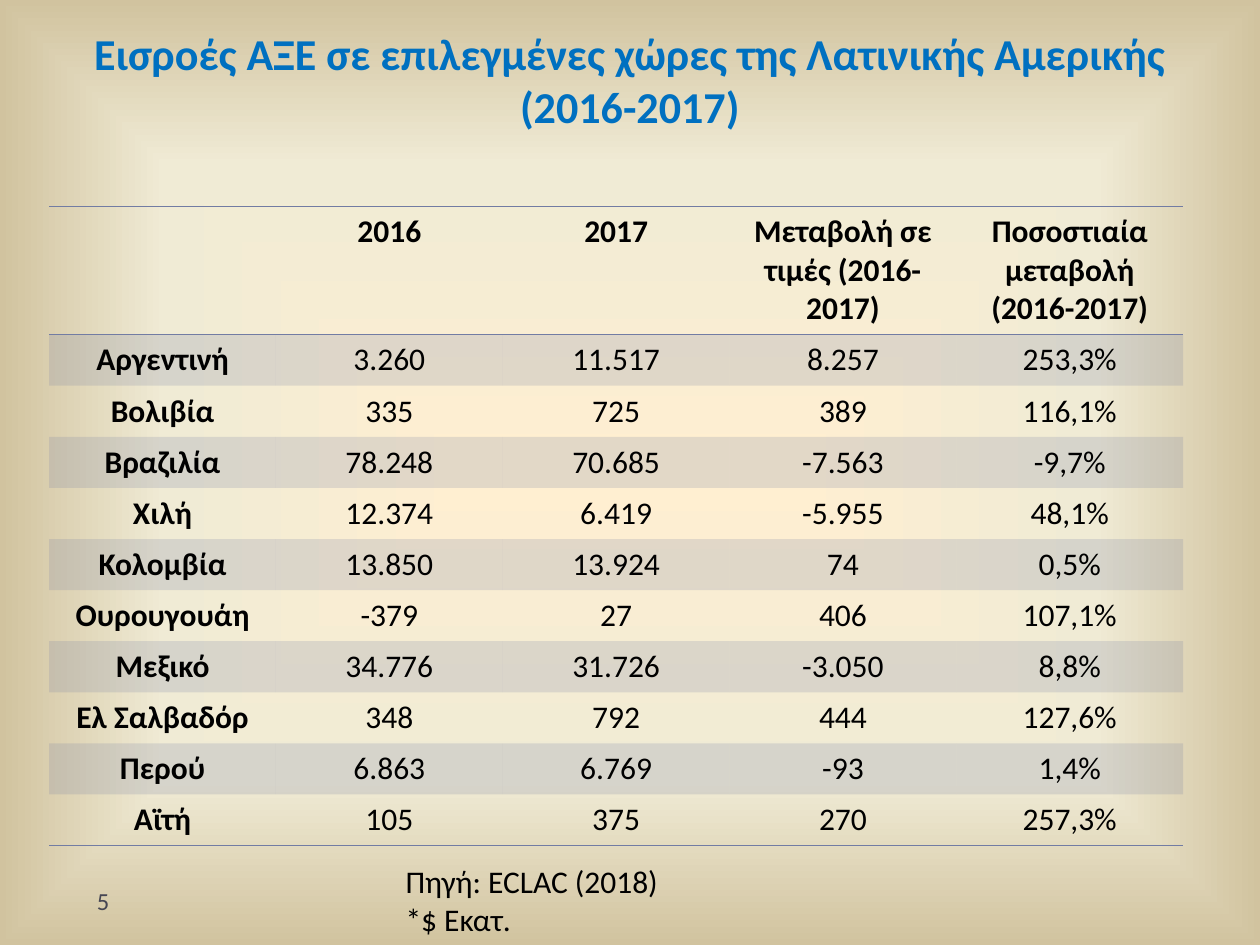
from dataclasses import dataclass

from lxml.etree import SubElement
from pptx import Presentation
from pptx.dml.color import RGBColor
from pptx.enum.text import MSO_ANCHOR, PP_ALIGN
from pptx.oxml import parse_xml
from pptx.oxml.ns import nsdecls, qn
from pptx.util import Inches, Pt

ACCENT = "727CA3"
BLACK = "000000"
FONT = "Calibri"
HEADERS = ("", "2016", "2017", "Μεταβολή σε τιμές (2016-2017)", "Ποσοστιαία μεταβολή (2016-2017)")


@dataclass
class CountryFlow:
    country: str
    first_year: str
    second_year: str
    change: str
    percentage: str

    def values(self) -> tuple:
        return self.country, self.first_year, self.second_year, self.change, self.percentage


FLOWS = (
    CountryFlow("Αργεντινή", "3.260", "11.517", "8.257", "253,3%"),
    CountryFlow("Βολιβία", "335", "725", "389", "116,1%"),
    CountryFlow("Βραζιλία", "78.248", "70.685", "-7.563", "-9,7%"),
    CountryFlow("Χιλή", "12.374", "6.419", "-5.955", "48,1%"),
    CountryFlow("Κολομβία", "13.850", "13.924", "74", "0,5%"),
    CountryFlow("Ουρουγουάη", "-379", "27", "406", "107,1%"),
    CountryFlow("Μεξικό", "34.776", "31.726", "-3.050", "8,8%"),
    CountryFlow("Ελ Σαλβαδόρ", "348", "792", "444", "127,6%"),
    CountryFlow("Περού", "6.863", "6.769", "-93", "1,4%"),
    CountryFlow("Αϊτή", "105", "375", "270", "257,3%"),
)


def color(value: str) -> RGBColor:
    return RGBColor.from_string(value)


def write_text(frame, text: str, *, size: float = 18, fill: str = BLACK, bold: bool = False,
               align=PP_ALIGN.LEFT, anchor=MSO_ANCHOR.TOP) -> None:
    frame.word_wrap = True
    frame.vertical_anchor = anchor
    frame.text = text
    for paragraph in frame.paragraphs:
        paragraph.alignment = align
        paragraph.font.name = FONT
        paragraph.font.size = Pt(size)
        paragraph.font.bold = bold
        paragraph.font.color.rgb = color(fill)


def add_text(slide, text: str, left: float, top: float, width: float, height: float, **text_format) -> None:
    box = slide.shapes.add_textbox(Inches(left), Inches(top), Inches(width), Inches(height))
    write_text(box.text_frame, text, **text_format)


def paint_background(slide) -> None:
    slide.background.fill.solid()
    properties = slide.element.find(".//" + qn("p:bgPr"))
    stops = "".join(
        f'<a:gs pos="{position * 1000}"><a:srgbClr val="{value}"/></a:gs>'
        for position, value in ((0, "FFEFD1"), (65, "F0EBD5"), (100, "D1C39F"))
    )
    gradient = parse_xml(
        f'<a:gradFill {nsdecls("a")} rotWithShape="1"><a:gsLst>{stops}</a:gsLst>'
        '<a:path path="shape"><a:fillToRect l="50000" t="50000" r="50000" b="50000"/></a:path></a:gradFill>'
    )
    properties.replace(properties.find(qn("a:solidFill")), gradient)


def set_borders(cell, *sides: str) -> None:
    properties = cell._tc.get_or_add_tcPr()
    for index, side in enumerate(sides):
        properties.insert(index, parse_xml(
            f'<a:ln{side} {nsdecls("a")} w="12700"><a:solidFill><a:srgbClr val="{ACCENT}"/>'
            f'</a:solidFill></a:ln{side}>'
        ))


def fill_cell(cell, banded: bool) -> None:
    if not banded:
        cell.fill.background()
        return
    cell.fill.solid()
    cell.fill.fore_color.rgb = color(ACCENT)
    tint = cell._tc.tcPr.find(".//" + qn("a:srgbClr"))
    SubElement(tint, qn("a:alpha"), val="20000")


def add_flow_table(slide) -> None:
    rows = [HEADERS] + [flow.values() for flow in FLOWS]
    frame = slide.shapes.add_table(len(rows), len(HEADERS), Inches(0.39), Inches(1.64), Inches(9), Inches(5.06))
    table = frame.table
    table.first_row = table.horz_banding = False
    table._tbl.tblPr.find(qn("a:tableStyleId")).text = "{2D5ABB26-0587-4C30-8999-92F81FD0307C}"
    for row_index, values in enumerate(rows):
        table.rows[row_index].height = Inches(0.405 if row_index else 1.01)
        for column_index, value in enumerate(values):
            cell = table.cell(row_index, column_index)
            write_text(cell.text_frame, value, bold=row_index == 0 or column_index == 0, align=PP_ALIGN.CENTER)
            fill_cell(cell, banded=row_index % 2 == 1)
            if row_index == 0:
                set_borders(cell, "T", "B")
            elif row_index == len(FLOWS):
                set_borders(cell, "B")


def main() -> None:
    presentation = Presentation()
    presentation.slide_width = Inches(10)
    presentation.slide_height = Inches(7.5)
    slide = presentation.slides.add_slide(presentation.slide_layouts[5])
    paint_background(slide)

    title = slide.shapes.title
    title.left, title.top, title.width, title.height = Inches(0.5), Inches(0.17), Inches(9), Inches(0.93)
    write_text(title.text_frame, "Εισροές ΑΞΕ σε επιλεγμένες χώρες της Λατινικής Αμερικής (2016-2017)",
               size=25.2, fill="0070C0", bold=True, align=PP_ALIGN.CENTER, anchor=MSO_ANCHOR.BOTTOM)

    add_flow_table(slide)
    add_text(slide, "5", 0.67, 6.95, 2.17, 0.4, size=14, fill="464653", anchor=MSO_ANCHOR.MIDDLE)
    add_text(slide, "Πηγή: ECLAC (2018)\n*$ Εκατ.", 3.12, 6.79, 3.52, 0.71)
    presentation.save("out.pptx")


if __name__ == "__main__":
    main()
